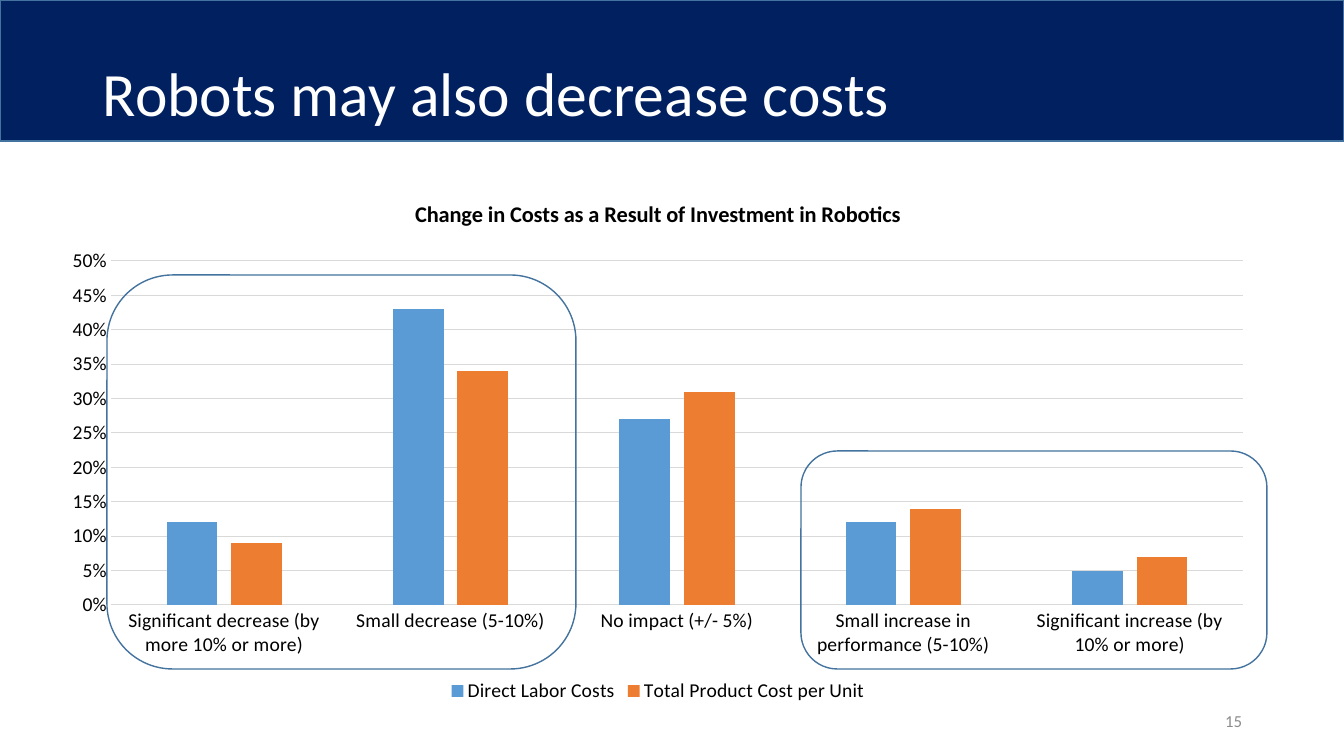
"""Build a slide with a clustered column chart of cost changes from robotics."""
from lxml import etree
from pptx import Presentation
from pptx.chart.data import CategoryChartData
from pptx.dml.color import RGBColor
from pptx.enum.chart import XL_CHART_TYPE, XL_LEGEND_POSITION, XL_TICK_MARK
from pptx.enum.shapes import MSO_SHAPE
from pptx.enum.text import MSO_ANCHOR, PP_ALIGN
from pptx.oxml.ns import qn
from pptx.util import Pt

TITLE = "Robots may also decrease costs"
NUMBER = "15"
HEADING = "Change in Costs as a Result of Investment in Robotics"
GROUPS = [
    "Significant decrease (by more 10% or more)",
    "Small decrease (5-10%)",
    "No impact (+/- 5%)",
    "Small increase in performance (5-10%)",
    "Significant increase (by 10% or more)",
]
NAVY = RGBColor(0x00, 0x20, 0x60)
EDGE = RGBColor(0x43, 0x73, 0x9E)
WHITE = RGBColor(0xFF, 0xFF, 0xFF)
BLACK = RGBColor(0x00, 0x00, 0x00)
GRAY = RGBColor(0x8C, 0x8C, 0x8C)
GRID = RGBColor(0xD9, 0xD9, 0xD9)
BLUE = RGBColor(0x5B, 0x9B, 0xD5)
ORANGE = RGBColor(0xED, 0x7D, 0x31)
SERIES = [
    ("Direct Labor Costs", (0.12, 0.43, 0.27, 0.12, 0.05), BLUE),
    ("Total Product Cost per Unit", (0.09, 0.34, 0.31, 0.14, 0.07), ORANGE),
]
FONT = "Calibri"
PAGE = (1344, 756)
BANNER = (0, 0, 1344, 141)
CHART = (48, 179, 1220, 528)
PLOT = (111, 261, 1132, 344)
RINGS = [(107, 275, 469, 394), (801, 451, 466, 218)]
SCALE = 914400 / 100.8


def emu(box):
    return [round(n * SCALE) for n in box]


def style(font, size, color, bold=False):
    font.name, font.size, font.bold = FONT, Pt(size), bold
    font.color.rgb = color


def add_text(slide, box, text, size, color, align, space=1.0):
    frame = slide.shapes.add_textbox(*emu(box)).text_frame
    frame.word_wrap = True
    frame.vertical_anchor = MSO_ANCHOR.MIDDLE
    para = frame.paragraphs[0]
    para.alignment, para.line_spacing = align, space
    run = para.add_run()
    run.text = text
    style(run.font, size, color)


def add_frame(slide, kind, box, fill=None):
    shape = slide.shapes.add_shape(kind, *emu(box))
    shape.shadow.inherit = False
    if fill is None:
        shape.fill.background()
    else:
        shape.fill.solid()
        shape.fill.fore_color.rgb = fill
    shape.line.color.rgb = EDGE
    shape.line.width = Pt(1)


def place_plot(chart):
    area = chart.element.find(".//" + qn("c:plotArea"))
    for old in area.findall(qn("c:layout")):
        area.remove(old)
    layout = etree.Element(qn("c:layout"))
    area.insert(0, layout)
    manual = etree.SubElement(layout, qn("c:manualLayout"))
    left, top, width, height = CHART
    parts = {
        "layoutTarget": "inner", "xMode": "edge", "yMode": "edge",
        "x": (PLOT[0] - left) / width, "y": (PLOT[1] - top) / height,
        "w": PLOT[2] / width, "h": PLOT[3] / height,
    }
    for tag, val in parts.items():
        text = val if isinstance(val, str) else f"{val:.4f}"
        etree.SubElement(manual, qn("c:" + tag)).set("val", text)


def add_costs(slide):
    data = CategoryChartData(number_format="0%")
    data.categories = GROUPS
    for name, vals, _ in SERIES:
        data.add_series(name, vals)
    kind = XL_CHART_TYPE.COLUMN_CLUSTERED
    chart = slide.shapes.add_chart(kind, *emu(CHART), data).chart
    style(chart.font, 14, BLACK)

    chart.has_title = True
    run = chart.chart_title.text_frame.paragraphs[0].add_run()
    run.text = HEADING
    style(run.font, 16, BLACK, True)
    chart.chart_title.include_in_layout = False

    chart.has_legend = True
    chart.legend.position = XL_LEGEND_POSITION.BOTTOM
    chart.legend.include_in_layout = False

    plot = chart.plots[0]
    plot.gap_width, plot.overlap, plot.vary_by_categories = 219, -27, False
    for bars, (_, _, color) in zip(plot.series, SERIES):
        bars.format.fill.solid()
        bars.format.fill.fore_color.rgb = color

    cat, val = chart.category_axis, chart.value_axis
    for axis in (cat, val):
        axis.major_tick_mark = axis.minor_tick_mark = XL_TICK_MARK.NONE
    val.minimum_scale, val.maximum_scale, val.major_unit = 0, 0.5, 0.05
    val.tick_labels.number_format = "0%"
    val.tick_labels.number_format_is_linked = False
    val.format.line.fill.background()
    for line in (cat.format.line, val.major_gridlines.format.line):
        line.color.rgb = GRID
        line.width = Pt(0.75)
    place_plot(chart)


def main():
    deck = Presentation()
    deck.slide_width, deck.slide_height = emu(PAGE)
    slide = deck.slides.add_slide(deck.slide_layouts[6])
    add_frame(slide, MSO_SHAPE.RECTANGLE, BANNER, NAVY)
    add_text(slide, (93, 24, 1212, 146), TITLE, 44, WHITE, PP_ALIGN.LEFT, 0.9)
    add_text(slide, (950, 701, 302, 40), NUMBER, 12, GRAY, PP_ALIGN.RIGHT)
    add_costs(slide)
    for ring in RINGS:
        add_frame(slide, MSO_SHAPE.ROUNDED_RECTANGLE, ring)
    deck.save("out.pptx")


if __name__ == "__main__":
    main()
